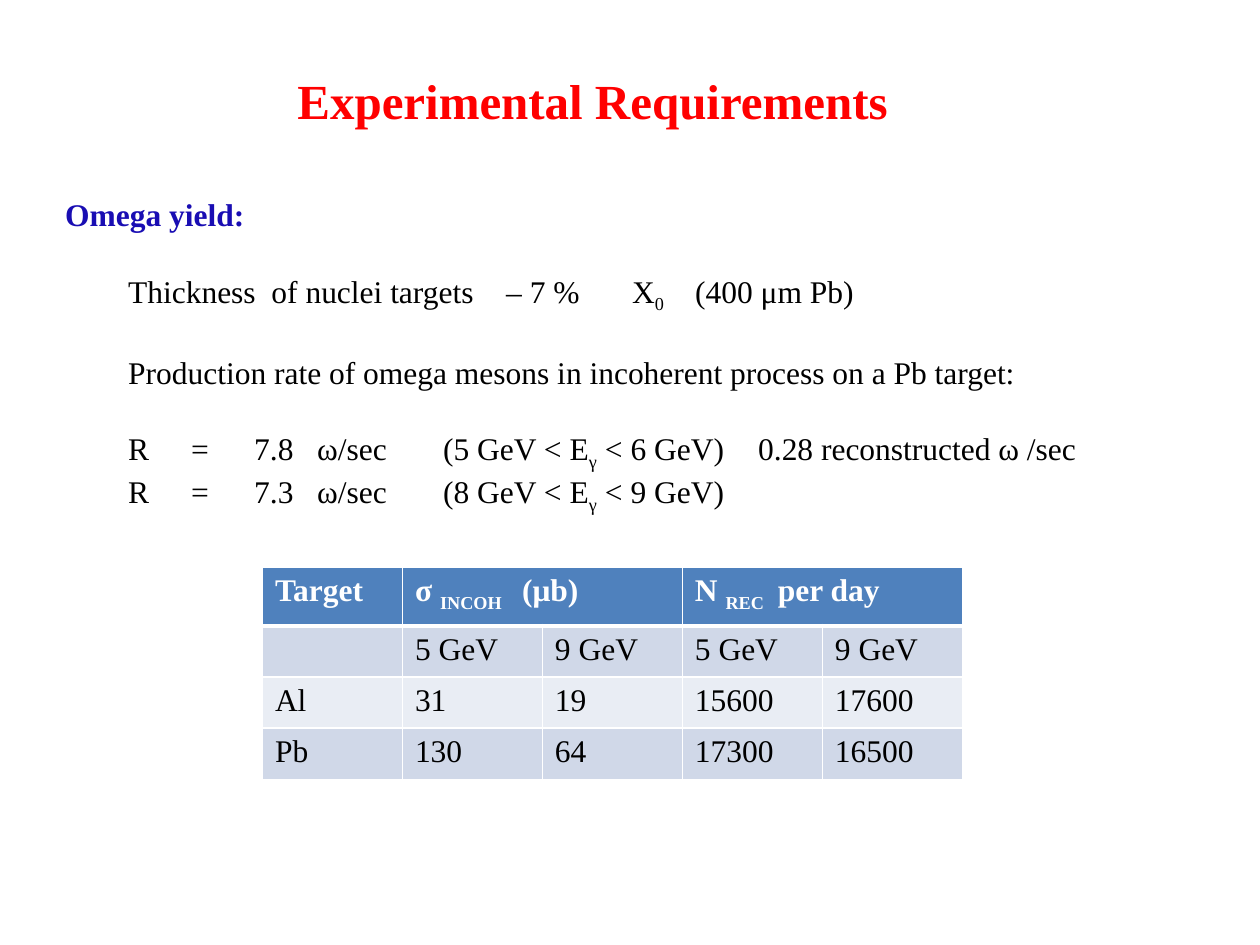
from pptx import Presentation, util as u
from pptx.dml.color import RGBColor
from pptx.enum import text
from pptx.oxml.ns import qn
from lxml import etree

FONT = "Times New Roman"
RED, NAVY, BLACK, WHITE = "FF0000", "190DB3", "000000", "FFFFFF"
HEAD, DARK, LIGHT = "4F81BD", "D0D8E8", "E9EDF4"


def color(hue):
    return RGBColor.from_string(hue)


def add(par, words, hue=BLACK, bold=False, size=18, sub=False):
    """Add one run to a paragraph."""
    run = par.add_run()
    run.text = words
    font = run.font
    font.name, font.size, font.bold = FONT, u.Pt(size), bold
    font.color.rgb = color(hue)
    if sub:
        font._element.set("baseline", "-25000")


def fill_par(par, parts, hue=BLACK, bold=False):
    """Add runs that alternate between normal and subscript."""
    for i, words in enumerate(parts):
        add(par, words, hue, bold, sub=i % 2 == 1)


def put(shape, box):
    shape.left, shape.top, shape.width, shape.height = map(u.Cm, box)


def set_par(par, stops, gap):
    """Drop the bullet and indent, then set the gap and tab stops (cm)."""
    par.alignment = text.PP_ALIGN.LEFT
    par.space_before = u.Pt(gap)
    ppr = par._p.get_or_add_pPr()
    ppr.set("marL", "0")
    ppr.set("indent", "0")
    etree.SubElement(ppr, qn("a:buNone"))
    if stops:
        tabs = etree.SubElement(ppr, qn("a:tabLst"))
        for stop in stops:
            etree.SubElement(tabs, qn("a:tab"), pos=str(u.Cm(stop)), algn="l")


def title(slide, box):
    shape = slide.shapes.title
    put(shape, box)
    frame = shape.text_frame
    frame.auto_size = text.MSO_AUTO_SIZE.NONE
    frame.vertical_anchor = text.MSO_ANCHOR.MIDDLE
    par = frame.paragraphs[0]
    par.alignment = text.PP_ALIGN.CENTER
    add(par, "Experimental Requirements ", RED, True, 28)


def yields(slide, box):
    body = slide.placeholders[1]
    put(body, box)
    frame = body.text_frame
    frame.word_wrap = True
    frame.auto_size = text.MSO_AUTO_SIZE.NONE
    frame.vertical_anchor = text.MSO_ANCHOR.TOP

    # Heading
    par = frame.paragraphs[0]
    set_par(par, [], 0)
    add(par, "Omega yield:", NAVY, True)

    # Lines: tab stops, space before, runs
    near = [0.79, 8.21, 10.03, 11.14]
    rate = [2.54, 3.44, 4.1, 5.37, 7.57, 14.18]
    lines = [
        (near, 22, ["\tThickness  of nuclei targets\t– 7 %\tX", "0",
                    "\t(400 μm Pb)"]),
        (near, 22, ["\tProduction rate of omega mesons in incoherent "
                    "process on a Pb target:"]),
        (rate, 22, ["\tR\t=\t7.8\tω/sec\t(5 GeV < E", "γ",
                    " < 6 GeV)\t0.28 reconstructed ω /sec"]),
        (rate, 0, ["\tR\t=\t7.3\tω/sec\t(8 GeV < E", "γ", " < 9 GeV)"]),
    ]
    for stops, gap, parts in lines:
        par = frame.add_paragraph()
        set_par(par, stops, gap)
        fill_par(par, parts)


def edge(cell, side, width):
    """Draw one white cell border."""
    line = etree.SubElement(cell._tc.get_or_add_tcPr(), qn("a:ln" + side),
                            w=str(u.Pt(width)))
    paint = etree.SubElement(line, qn("a:solidFill"))
    etree.SubElement(paint, qn("a:srgbClr"), val=WHITE)


def rates(slide, box):
    rows = [
        [["Target"], ["σ ", "INCOH ", "  (μb)"], [],
         ["N ", "REC   ", "per day"], []],
        [[], ["5 GeV"], ["9 GeV"], ["5 GeV"], ["9 GeV"]],
        [["Al"], ["31"], ["19"], ["15600"], ["17600"]],
        [["Pb"], ["130"], ["64"], ["17300"], ["16500"]],
    ]
    frame = slide.shapes.add_table(len(rows), len(rows[0]), *map(u.Cm, box))
    grid = frame.table
    for col in grid.columns:
        col.width = u.Cm(box[2] / len(rows[0]))
    for i, row in enumerate(grid.rows):
        row.height = u.Cm(1.19 if i == 0 else 1.03)

    # Cells: borders, fill, text
    fills = [HEAD, DARK, LIGHT, DARK]
    for i, row in enumerate(rows):
        for j, parts in enumerate(row):
            cell = grid.cell(i, j)
            for side in "LRTB":
                thick = (i, side) in ((0, "B"), (1, "T"))
                edge(cell, side, 3 if thick else 1)
            cell.fill.solid()
            cell.fill.fore_color.rgb = color(fills[i])
            fill_par(cell.text_frame.paragraphs[0], parts,
                     WHITE if i == 0 else BLACK, i == 0)

    # Headings over two columns
    for j in (1, 3):
        grid.cell(0, j).merge(grid.cell(0, j + 1))


def main():
    deck = Presentation()
    deck.slide_width, deck.slide_height = u.Cm(25.4), u.Cm(19.05)
    slide = deck.slides.add_slide(deck.slide_layouts[1])
    yields(slide, (1.06, 3.81, 21.6, 8.2))
    title(slide, (1.27, 1.06, 21.6, 1.9))
    rates(slide, (5.29, 11.43, 14.11, 4.28))
    deck.save("out.pptx")


if __name__ == "__main__":
    main()
